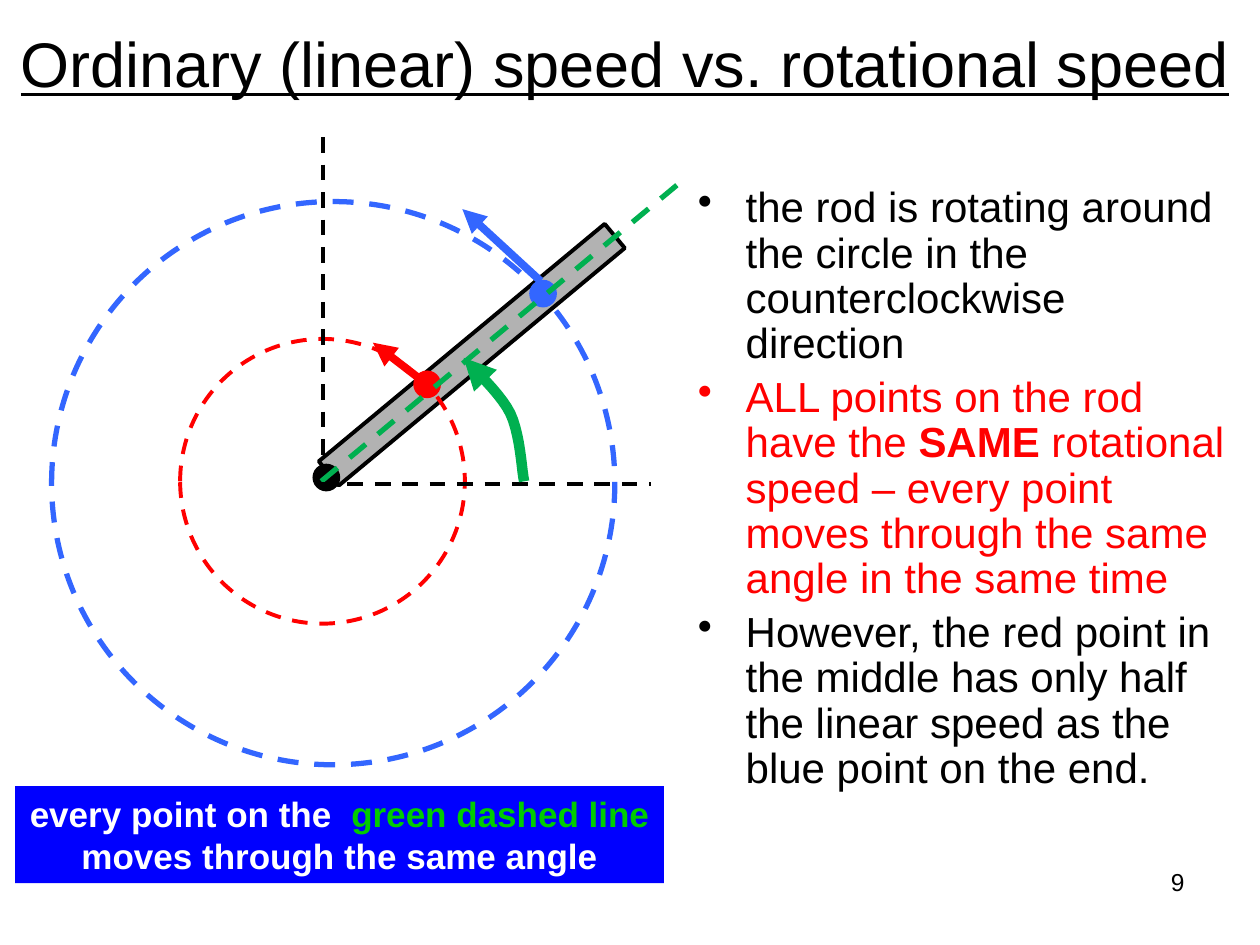
from lxml.etree import SubElement
from pptx import Presentation
from pptx.dml.color import RGBColor
from pptx.enum.dml import MSO_LINE
from pptx.enum.shapes import MSO_CONNECTOR, MSO_SHAPE
from pptx.enum.text import MSO_ANCHOR, MSO_AUTO_SIZE, PP_ALIGN
from pptx.oxml.ns import qn
from pptx.util import Inches, Pt

BLACK = RGBColor(0x00, 0x00, 0x00)
WHITE = RGBColor(0xFF, 0xFF, 0xFF)
RED = RGBColor(0xFF, 0x00, 0x00)
BLUE = RGBColor(0x33, 0x66, 0xFF)
GREEN = RGBColor(0x00, 0xB0, 0x50)
BRIGHT_GREEN = RGBColor(0x00, 0xCC, 0x00)
GRAY = RGBColor(0xB2, 0xB2, 0xB2)
BANNER_BLUE = RGBColor(0x00, 0x00, 0xFF)

SLIDE_WIDTH, SLIDE_HEIGHT = Inches(10), Inches(7.5)
COLUMNS = 100
POINT_SIZE = 2.2
CURVE_STEPS = 10

RULES = [
    (BLACK, [("the rod is rotating around the circle in the counterclockwise direction", False)]),
    (RED, [("ALL points on the rod have the ", False), ("SAME", True),
           (" rotational speed – every point moves through the same angle in the same time", False)]),
    (BLACK, [("However, the red point in the middle has only half the linear speed "
              "as the blue point on the end.", False)]),
]


def grid(*cells):
    return [round(SLIDE_WIDTH * cell / COLUMNS) for cell in cells]


def set_font(paragraph, size, color, bold=False):
    font = paragraph.font
    font.name, font.size, font.bold = "Arial", Pt(size), bold
    font.color.rgb = color


def set_line(line, color, width, dashed=False):
    line.color.rgb = color
    line.width = Pt(width)
    if dashed:
        line.dash_style = MSO_LINE.DASH


def add_arrowhead(stroke):
    SubElement(stroke.element.spPr.find(qn("a:ln")), qn("a:tailEnd"), type="triangle")


def add_title(slide, text):
    title = slide.shapes.title
    title.left, title.top, title.width, title.height = grid(-0.4, 0, 100, 9.9)
    frame = title.text_frame
    frame.text = text
    frame.word_wrap = True
    frame.auto_size = MSO_AUTO_SIZE.NONE
    frame.vertical_anchor = MSO_ANCHOR.MIDDLE
    heading = frame.paragraphs[0]
    heading.alignment = PP_ALIGN.CENTER
    set_font(heading, 36, BLACK)
    heading.font.underline = True


def add_text_area(slide, cells):
    frame = slide.shapes.add_textbox(*grid(*cells)).text_frame
    frame.word_wrap = True
    return frame


def add_rules(slide, cells, rules):
    frame = add_text_area(slide, cells)
    for index, (color, pieces) in enumerate(rules):
        rule = frame.paragraphs[0] if index == 0 else frame.add_paragraph()
        rule.line_spacing = 0.9
        rule.space_before = Pt(4.8)
        set_font(rule, 24, color)
        indent = Inches(0.38)
        properties = rule._p.get_or_add_pPr()
        properties.set("marL", str(indent))
        properties.set("indent", str(-indent))
        bullet = properties.makeelement(qn("a:buChar"), {"char": "•"})
        properties.insert_element_before(bullet, "a:tabLst", "a:defRPr", "a:extLst")
        for text, bold in pieces:
            run = rule.add_run()
            run.text = text
            if bold:
                run.font.bold = True


def add_figure(slide, kind, cells, fill=None):
    figure = slide.shapes.add_shape(kind, *grid(*cells))
    figure.shadow.inherit = False
    figure.line.fill.background()
    if fill is None:
        figure.fill.background()
    else:
        figure.fill.solid()
        figure.fill.fore_color.rgb = fill
    return figure


def add_orbit(slide, left, top, diameter, color, width):
    orbit = add_figure(slide, MSO_SHAPE.OVAL, (left, top, diameter, diameter))
    set_line(orbit.line, color, width, dashed=True)


def add_point(slide, left, top, color):
    add_figure(slide, MSO_SHAPE.OVAL, (left, top, POINT_SIZE, POINT_SIZE), color)


def add_rod(slide, cells, angle):
    rod = add_figure(slide, MSO_SHAPE.RECTANGLE, cells, GRAY)
    rod.rotation = angle
    set_line(rod.line, BLACK, 2.25)


def add_stroke(slide, start, end, color, width, dashed=False):
    stroke = slide.shapes.add_connector(MSO_CONNECTOR.STRAIGHT, *grid(*start, *end))
    set_line(stroke.line, color, width, dashed)
    SubElement(stroke.element.spPr, qn("a:effectLst"))
    return stroke


def add_velocity(slide, start, end, color):
    add_arrowhead(add_stroke(slide, start, end, color, 4.5))


def bezier(controls, t):
    weights = ((1 - t) ** 3, 3 * t * (1 - t) ** 2, 3 * t ** 2 * (1 - t), t ** 3)
    return grid(*(sum(w * value for w, value in zip(weights, axis)) for axis in zip(*controls)))


def add_angle_arrow(slide, curves, color):
    outline = slide.shapes.build_freeform(*grid(*curves[0][0]))
    points = [bezier(curve, step / CURVE_STEPS)
              for curve in curves for step in range(1, CURVE_STEPS + 1)]
    outline.add_line_segments(points, close=False)
    arrow = outline.convert_to_shape()
    arrow.shadow.inherit = False
    arrow.fill.background()
    set_line(arrow.line, color, 6)
    add_arrowhead(arrow)


def add_banner(slide, cells, lines):
    frame = add_figure(slide, MSO_SHAPE.RECTANGLE, cells, BANNER_BLUE).text_frame
    frame.word_wrap = False
    for index, pieces in enumerate(lines):
        statement = frame.paragraphs[0] if index == 0 else frame.add_paragraph()
        statement.alignment = PP_ALIGN.CENTER
        set_font(statement, 20, WHITE, bold=True)
        for text, color in pieces:
            run = statement.add_run()
            run.text = text
            run.font.color.rgb = color


def add_page_number(slide, cells, number):
    page = add_text_area(slide, cells).paragraphs[0]
    page.text = number
    page.alignment = PP_ALIGN.RIGHT
    set_font(page, 14, BLACK)


def main():
    deck = Presentation()
    deck.slide_width, deck.slide_height = SLIDE_WIDTH, SLIDE_HEIGHT
    slide = deck.slides.add_slide(deck.slide_layouts[5])

    add_title(slide, "Ordinary (linear) speed vs. rotational speed")
    add_rules(slide, (54.4, 14.3, 44.2, 50.2), RULES)

    add_orbit(slide, 4.1, 16, 44.7, BLUE, 3)
    add_rod(slide, (22.7, 26.9, 29.5, 2.5), 320.3)
    add_point(slide, 24.8, 36.8, BLACK)
    add_point(slide, 32.8, 29.4, RED)
    add_point(slide, 42, 22.2, BLUE)
    add_velocity(slide, (42.9, 22.3), (36.7, 16.6), BLUE)
    add_velocity(slide, (33.1, 29.9), (29.6, 27.2), RED)
    add_orbit(slide, 14.3, 26.9, 22.6, RED, 2.25)

    add_stroke(slide, (25.6, 10.9), (25.6, 37.4), BLACK, 2.25, dashed=True)
    add_stroke(slide, (25.5, 38.2), (54.2, 14.3), GREEN, 3, dashed=True)
    add_stroke(slide, (25.4, 38.4), (51.7, 38.4), BLACK, 2.25, dashed=True)
    add_angle_arrow(slide, [
        [(41.6, 38.2), (41.4, 37.3), (41.3, 34.5), (40.5, 32.8)],
        [(40.5, 32.8), (39.7, 31.2), (37.6, 29.3), (36.8, 28.4)],
    ], GREEN)

    add_banner(slide, (1.2, 62.4, 51.5, 7.7), [
        [("every point on the  ", WHITE), ("green dashed line", BRIGHT_GREEN)],
        [("moves through the same angle", WHITE)],
    ])
    add_page_number(slide, (71.7, 68.3, 23.3, 5.2), "9")
    deck.save("out.pptx")


if __name__ == "__main__":
    main()
